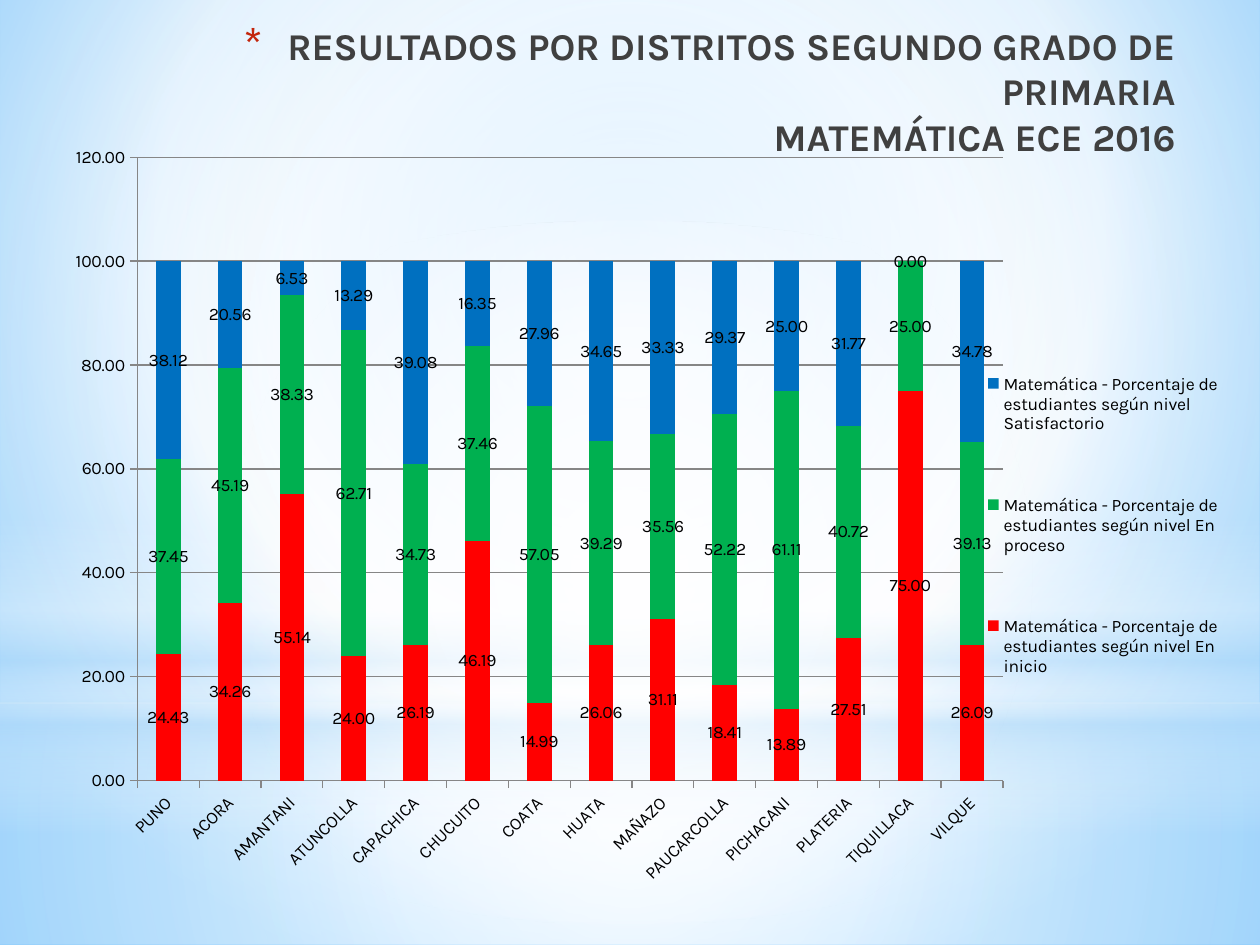
from lxml import etree
from pptx import Presentation
from pptx.chart.data import CategoryChartData
from pptx.dml.color import RGBColor
from pptx.enum import chart as charts, shapes, text
from pptx.oxml import ns
from pptx.util import Inches, Pt

BLACK = RGBColor(0, 0, 0)
CHARCOAL = RGBColor(0x40, 0x40, 0x40)
GREY = RGBColor(0x86, 0x86, 0x86)
WHITE = RGBColor(0xFF, 0xFF, 0xFF)
SKY = RGBColor(0xB4, 0xDC, 0xFA)
LIGHT_BLUE = RGBColor(0x9E, 0xD5, 0xFF)
STRONG_BLUE = RGBColor(0x5B, 0xB9, 0xFF)
BULLET_RED = RGBColor(0xC3, 0x26, 0x0C)
RED = RGBColor(0xFF, 0, 0)
GREEN = RGBColor(0, 0xB0, 0x50)
BLUE = RGBColor(0, 0x70, 0xC0)
FONT = "Karla"

DISTRICTS = ["PUNO", "ACORA", "AMANTANI", "ATUNCOLLA", "CAPACHICA", "CHUCUITO", "COATA",
             "HUATA", "MAÑAZO", "PAUCARCOLLA", "PICHACANI", "PLATERIA", "TIQUILLACA", "VILQUE"]
LEVELS = [
    ("En inicio", RED, [24.43, 34.26, 55.14, 24, 26.19, 46.19, 14.99,
                        26.06, 31.11, 18.41, 13.89, 27.51, 75, 26.09]),
    ("En proceso", GREEN, [37.45, 45.19, 38.33, 62.71, 34.73, 37.46, 57.05,
                           39.29, 35.56, 52.22, 61.11, 40.72, 25, 39.13]),
    ("Satisfactorio", BLUE, [38.12, 20.56, 6.53, 13.29, 39.08, 16.35, 27.96,
                             34.65, 33.33, 29.37, 25, 31.77, 0, 34.78]),
]


def add_node(parent, tag, **attributes):
    node = etree.SubElement(parent, ns.qn(tag))
    for name, value in attributes.items():
        node.set(name, str(value))
    return node


def paint_gradient(fill, owner, stops, center=None, angle=90):
    fill.gradient()
    gradient = next(owner.iter(ns.qn("a:gradFill")))
    for child in list(gradient):
        gradient.remove(child)
    stop_list = add_node(gradient, "a:gsLst")
    for position, color, opacity in stops:
        stop = add_node(stop_list, "a:gs", pos=position * 1000)
        tint = add_node(stop, "a:srgbClr", val=color)
        if opacity < 100:
            add_node(tint, "a:alpha", val=opacity * 1000)
    if center:
        circle = add_node(gradient, "a:path", path="circle")
        sides = {side: share * 1000 for side, share in zip("ltrb", center)}
        add_node(circle, "a:fillToRect", **sides)
    else:
        add_node(gradient, "a:lin", ang=angle * 60000, scaled=0)


def add_glow(slide, kind, box, stops, center=None):
    glow = slide.shapes.add_shape(kind, *map(Inches, box))
    glow.shadow.inherit = False
    glow.line.fill.background()
    paint_gradient(glow.fill, glow.element, stops, center)


def add_backdrop(slide, width, height):
    paint_gradient(slide.background.fill, slide.element,
                   [(0, LIGHT_BLUE, 100), (60, WHITE, 100), (100, STRONG_BLUE, 100)],
                   (20, 10, 20, 60))
    rectangle, oval = shapes.MSO_SHAPE.RECTANGLE, shapes.MSO_SHAPE.OVAL
    middle = (50, 50, 50, 50)
    horizon = 5.58
    add_glow(slide, rectangle, (0, horizon, width, height - horizon),
             [(0, WHITE, 91), (37, WHITE, 76), (100, SKY, 79)], middle)
    add_glow(slide, rectangle, (0, 0, width, horizon),
             [(0, WHITE, 89), (48, WHITE, 62), (100, SKY, 79)], middle)
    add_glow(slide, rectangle, (0, 4.12, width, 2.5),
             [(0, WHITE, 0), (29, WHITE, 30), (45, SKY, 40),
              (55, WHITE, 26), (65, SKY, 60), (100, WHITE, 0)])
    add_glow(slide, oval, (0, 1.75, width, horizon),
             [(0, WHITE, 100), (56, WHITE, 0)], middle)


def add_text(slide, box, lines, size, color, bold=False, align=text.PP_ALIGN.LEFT):
    frame = slide.shapes.add_textbox(*map(Inches, box)).text_frame
    frame.word_wrap = True
    frame.vertical_anchor = text.MSO_ANCHOR.TOP
    paragraph = frame.paragraphs[0]
    paragraph.alignment = align
    for index, line in enumerate(lines):
        if index:
            paragraph.add_line_break()
        run = paragraph.add_run()
        run.text = line
        style_font(run.font, size, color, bold)
    return paragraph


def style_font(font, size, color, bold=False):
    font.name = FONT
    font.size = Pt(size)
    font.bold = bold
    font.color.rgb = color


def add_title(slide, box):
    heading = add_text(slide, box,
                       ["RESULTADOS POR DISTRITOS SEGUNDO GRADO DE PRIMARIA",
                        "MATEMÁTICA ECE 2016"],
                       size=21.6, color=CHARCOAL, bold=True, align=text.PP_ALIGN.RIGHT)
    properties = heading._p.get_or_add_pPr()
    properties.set("marL", str(Inches(0.35)))
    properties.set("indent", str(Inches(-0.35)))
    add_node(add_node(properties, "a:buClr"), "a:srgbClr", val=BULLET_RED)
    add_node(properties, "a:buSzPct", val=128000)
    add_node(properties, "a:buFont", typeface=FONT)
    add_node(properties, "a:buChar", char="*")


def set_layout(owner, x, y, w, h, inner=False):
    for old in owner.findall(ns.qn("c:layout")):
        owner.remove(old)
    layout = etree.Element(ns.qn("c:layout"))
    manual = add_node(layout, "c:manualLayout")
    if inner:
        add_node(manual, "c:layoutTarget", val="inner")
    for mode in ("xMode", "yMode"):
        add_node(manual, f"c:{mode}", val="edge")
    for side, share in zip("xywh", (x, y, w, h)):
        add_node(manual, f"c:{side}", val=share)
    return layout


def style_axis(axis):
    axis.format.line.color.rgb = GREY
    axis.format.line.width = Pt(0.75)
    axis.major_tick_mark = charts.XL_TICK_MARK.OUTSIDE
    style_font(axis.tick_labels.font, 10, BLACK)


def add_results_chart(slide, box):
    data = CategoryChartData(number_format="0.00")
    data.categories = DISTRICTS
    for level, _, values in LEVELS:
        data.add_series(f"Matemática - Porcentaje de estudiantes según nivel {level}", values)
    chart = slide.shapes.add_chart(charts.XL_CHART_TYPE.COLUMN_STACKED,
                                   *map(Inches, box), data).chart
    style_font(chart.font, 10, BLACK)
    chart.has_title = False

    columns = chart.plots[0]
    columns.vary_by_categories = False
    columns.gap_width = 150
    columns.overlap = 100
    for series, (_, color, _) in zip(columns.series, LEVELS):
        series.format.fill.solid()
        series.format.fill.fore_color.rgb = color
        labels = series.data_labels
        labels.show_value = True
        labels.number_format = "0.00"
        labels.number_format_is_linked = False
        style_font(labels.font, 10, BLACK)

    districts, percent = chart.category_axis, chart.value_axis
    style_axis(districts)
    style_axis(percent)
    districts.tick_labels._element.txPr.bodyPr.set("rot", str(-45 * 60000))
    percent.minimum_scale, percent.maximum_scale, percent.major_unit = 0, 120, 20
    percent.tick_labels.number_format = "0.00"
    percent.tick_labels.number_format_is_linked = False
    percent.has_major_gridlines = True
    percent.major_gridlines.format.line.color.rgb = GREY

    chart.has_legend = True
    legend = chart.legend
    legend.position = charts.XL_LEGEND_POSITION.RIGHT
    legend.include_in_layout = False
    style_font(legend.font, 10, BLACK)
    key = legend._element
    key.find(ns.qn("c:legendPos")).addnext(set_layout(key, 0.79, 0.23, 0.21, 0.55))
    area = chart._chartSpace.chart.plotArea
    area.insert(0, set_layout(area, 0.063, 0.029, 0.746, 0.806, inner=True))


def main():
    width, height = 10, 7.5
    presentation = Presentation()
    presentation.slide_width, presentation.slide_height = Inches(width), Inches(height)
    slide = presentation.slides.add_slide(presentation.slide_layouts[6])
    add_backdrop(slide, width, height)
    add_title(slide, (0.43, 0.13, 9, 1.1))
    add_results_chart(slide, (0.51, 1.07, 9.21, 6.14))
    presentation.save("out.pptx")


if __name__ == "__main__":
    main()
